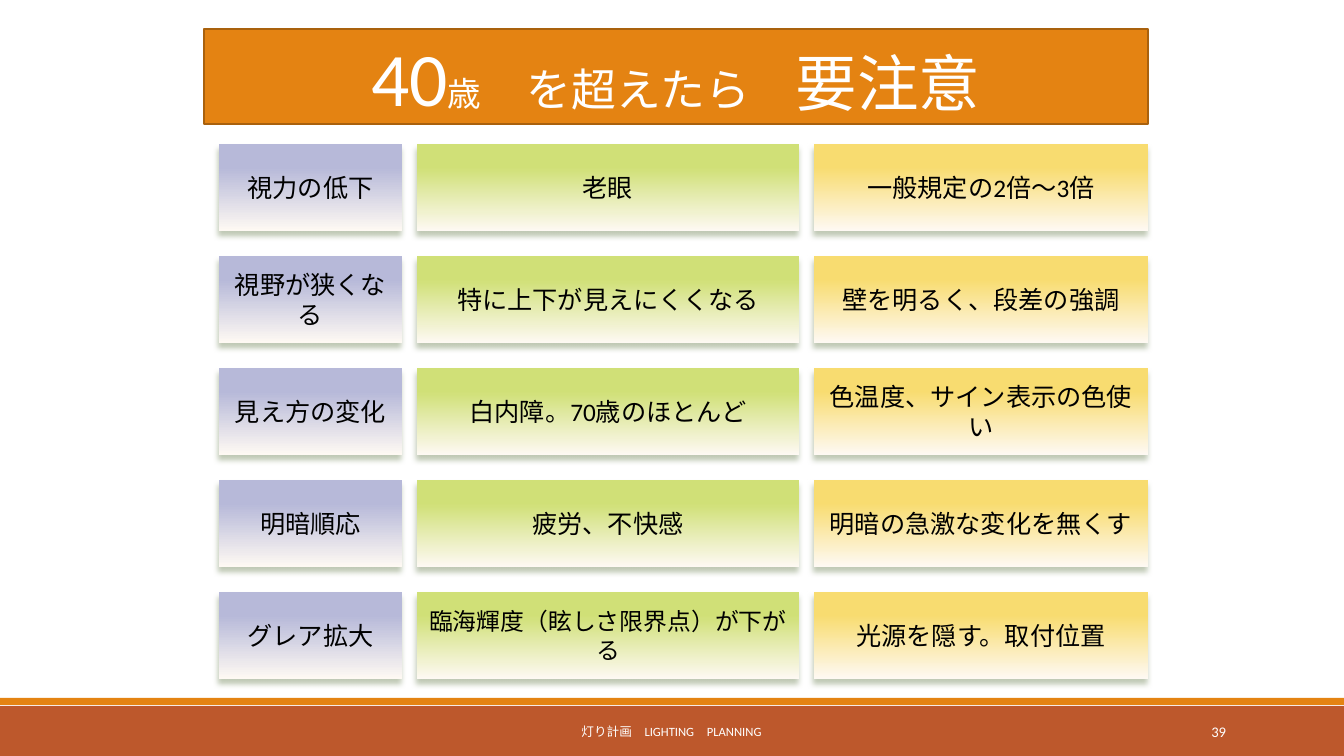
from lxml.etree import SubElement
from pptx import Presentation
from pptx.dml.color import RGBColor
from pptx.enum.shapes import MSO_SHAPE
from pptx.enum.text import MSO_ANCHOR, PP_ALIGN
from pptx.oxml.ns import qn
from pptx.util import Emu, Pt


def px(*lengths):
    return [Emu(round(length * 914400 / 100.8)) for length in lengths]


def write(shape, runs, color, alignment=PP_ALIGN.CENTER):
    frame = shape.text_frame
    frame.word_wrap = True
    frame.vertical_anchor = MSO_ANCHOR.MIDDLE
    paragraph = frame.paragraphs[0]
    paragraph.alignment = alignment
    for text, size in runs:
        run = paragraph.add_run()
        run.text = text
        run.font.name = "Calibri"
        run.font.size = Pt(size)
        run.font.color.rgb = RGBColor.from_string(color)


presentation = Presentation()
presentation.slide_width, presentation.slide_height = px(1344, 756)
slide = presentation.slides.add_slide(presentation.slide_layouts[6])
shapes = slide.shapes

for top, height, color in [(706, 50, "BD582C"), (698, 7, "E48312")]:
    bar = shapes.add_shape(MSO_SHAPE.RECTANGLE, *px(0, top, 1344, height))
    bar.shadow.inherit = False
    bar.fill.solid()
    bar.fill.fore_color.rgb = RGBColor.from_string(color)
    bar.line.fill.background()

footer = shapes.add_textbox(*px(406, 712, 531, 40))
write(footer, [("灯り計画　LIGHTING　PLANNING", 9)], "FFFFFF")
page_number = shapes.add_textbox(*px(1092, 712, 144, 40))
write(page_number, [("39", 10.5)], "FFFFFF", PP_ALIGN.RIGHT)

title = shapes.add_shape(MSO_SHAPE.RECTANGLE, *px(204, 29, 944, 95))
title.shadow.inherit = False
title.fill.solid()
title.fill.fore_color.rgb = RGBColor.from_string("E48312")
title.line.color.rgb = RGBColor.from_string("A9610D")
title.line.width = Pt(1.25)
write(title, [("40", 54), ("歳", 24), ("　を超えたら　", 32), ("要注意", 44)], "FFFFFF")

columns = [(219, 183, "B7B9D9"), (417, 382, "D0E077"), (814, 334, "F8DC70")]
rows = [
    ("視力の低下", "老眼", "一般規定の2倍〜3倍"),
    ("視野が狭くなる", "特に上下が見えにくくなる", "壁を明るく、段差の強調"),
    ("見え方の変化", "白内障。70歳のほとんど", "色温度、サイン表示の色使い"),
    ("明暗順応", "疲労、不快感", "明暗の急激な変化を無くす"),
    ("グレア拡大", "臨海輝度（眩しさ限界点）が下がる", "光源を隠す。取付位置"),
]
for row_index, row in enumerate(rows):
    for (left, width, color), text in zip(columns, row):
        card = shapes.add_shape(
            MSO_SHAPE.RECTANGLE, *px(left, 144 + 112 * row_index, width, 87)
        )
        card.line.fill.background()
        card.fill.gradient()
        card.fill.gradient_angle = 90
        stops = [(0, "FEF9F3"), (0.73, color)]
        for stop, (position, stop_color) in zip(card.fill.gradient_stops, stops):
            stop.position = position
            stop.color.rgb = RGBColor.from_string(stop_color)
        card.shadow.inherit = False
        effects = card.element.spPr.find(qn("a:effectLst"))
        shadow = SubElement(
            effects, qn("a:outerShdw"), blurRad=str(Pt(4)), dist=str(Pt(4)),
            dir=str(100 * 60000), rotWithShape="0",
        )
        SubElement(shadow, qn("a:srgbClr"), val="C1CAB6")
        write(card, [(text, 17 if len(text) > 15 else 18)], "000000")

presentation.save("out.pptx")
